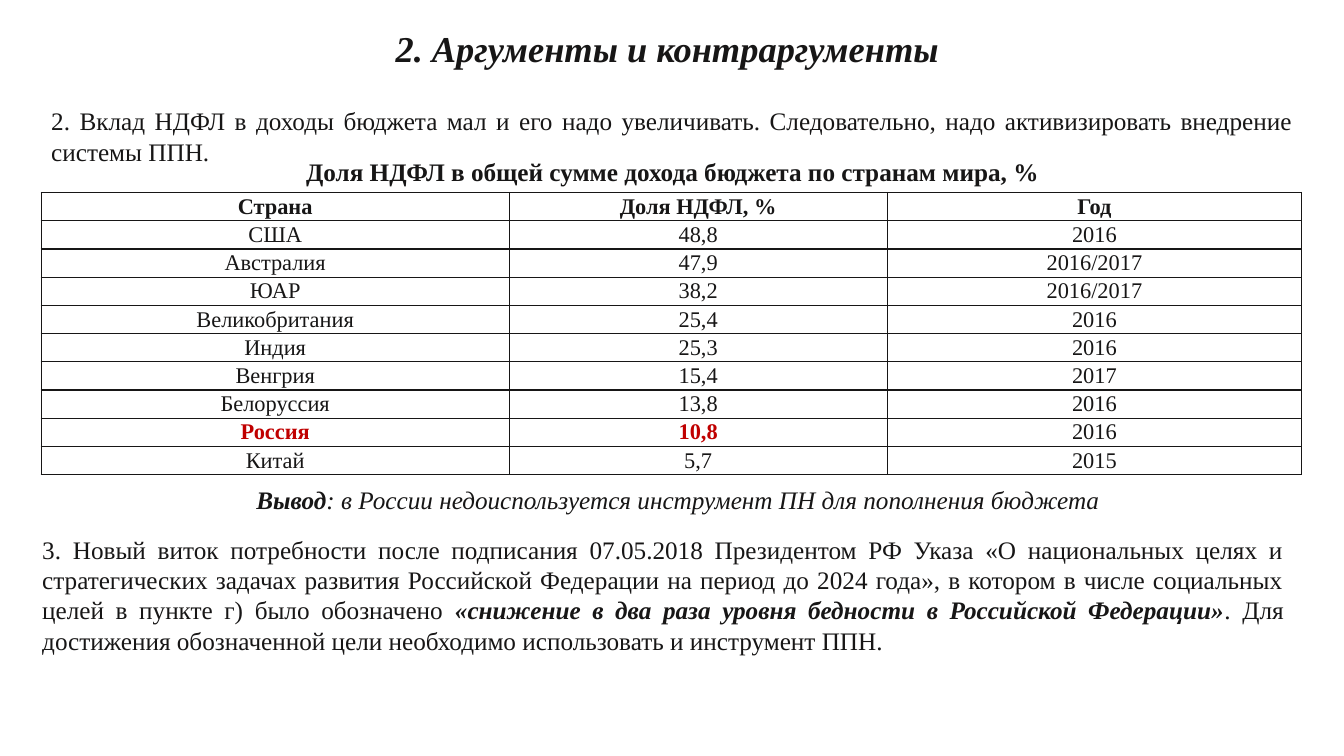
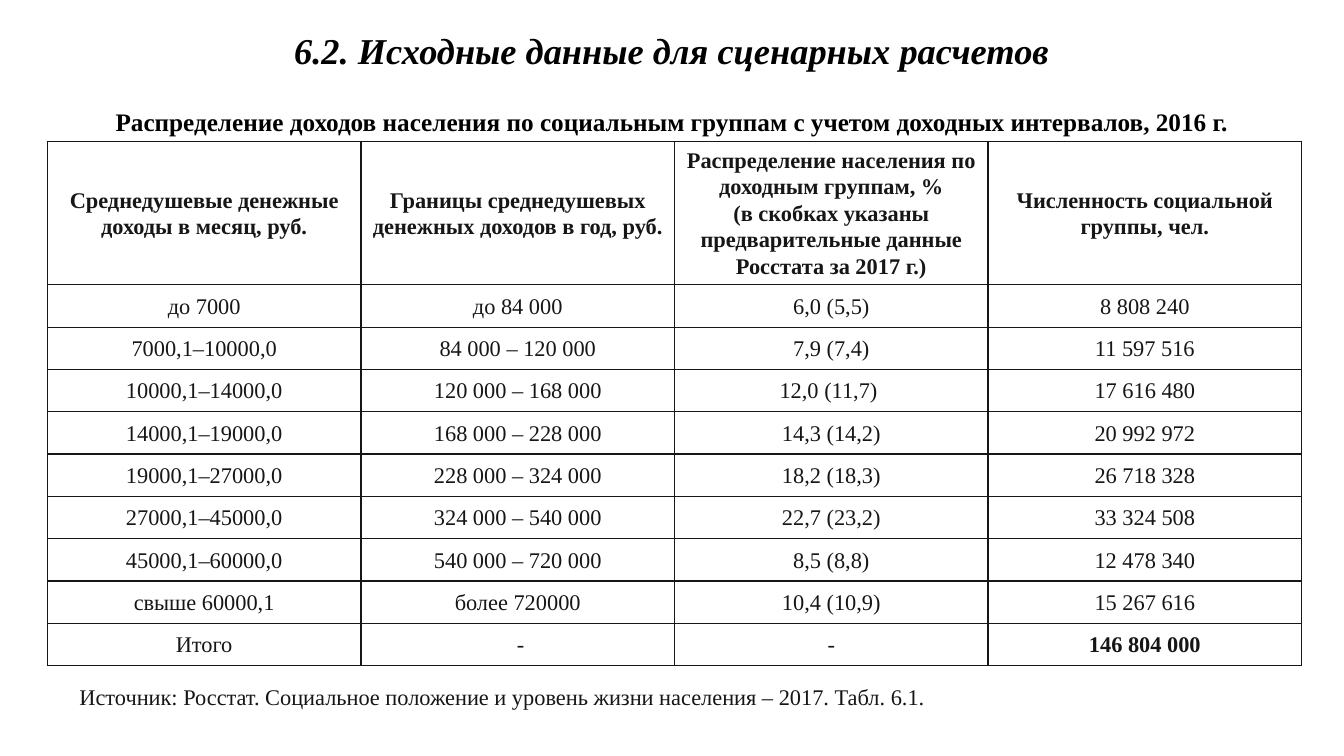
from lxml.etree import SubElement
from pptx import Presentation
from pptx.dml.color import RGBColor
from pptx.enum.text import MSO_ANCHOR, PP_ALIGN
from pptx.oxml.ns import qn
from pptx.util import Inches, Pt

W, H = 13.33, 7.5
FONT = "Times New Roman"
INK = RGBColor(0x17, 0x16, 0x16)
BLACK = RGBColor(0, 0, 0)
WHITE = RGBColor(255, 255, 255)
RED = RGBColor(0xC0, 0, 0)
TITLE, BODY, SMALL = 26, 18, 16
CENTER, JUSTIFY, LEFT = PP_ALIGN.CENTER, PP_ALIGN.JUSTIFY, PP_ALIGN.LEFT

# A text is a list of paragraphs, a paragraph a list of (words, style) runs;
# style letters: b = bold, i = italic.
CONTRIBUTION = [[("2. Вклад НДФЛ в доходы бюджета мал и его надо увеличивать. "
                  "Следовательно, надо активизировать внедрение системы ППН.", "")]]
SHARE_CAPTION = [[("Доля НДФЛ в общей сумме дохода бюджета по странам мира, %", "b")]]
CONCLUSION = [[("Вывод", "bi"),
               (": в России недоиспользуется инструмент ПН для пополнения бюджета", "i")]]
DECREE = [[("3. Новый виток потребности после подписания 07.05.2018 Президентом РФ Указа "
            "«О национальных целях и стратегических задачах развития Российской Федерации "
            "на период до 2024 года», в котором в числе социальных целей в пункте г) "
            "было обозначено ", ""),
           ("«снижение в два раза уровня бедности в Российской Федерации»", "bi"),
           (". Для достижения обозначенной цели необходимо использовать "
            "и инструмент ППН.", "")]]
INCOME_CAPTION = [[("Распределение доходов населения по социальным группам "
                    "с учетом доходных интервалов, 2016 г.", "b")]]
SOURCE = [[("Источник: Росстат. Социальное положение и уровень жизни населения – 2017. "
            "Табл. 6.1.", "")]]

SHARES = [
    ("Страна", "Доля НДФЛ, %", "Год"),
    ("США", "48,8", "2016"),
    ("Австралия", "47,9", "2016/2017"),
    ("ЮАР", "38,2", "2016/2017"),
    ("Великобритания", "25,4", "2016"),
    ("Индия", "25,3", "2016"),
    ("Венгрия", "15,4", "2017"),
    ("Белоруссия", "13,8", "2016"),
    ("Россия", "10,8", "2016"),
    ("Китай", "5,7", "2015"),
]
INCOMES = [
    ("Среднедушевые денежные доходы в месяц, руб.",
     "Границы среднедушевых денежных доходов в год, руб.",
     "Распределение населения по доходным группам, %\n"
     "(в скобках указаны предварительные данные Росстата за 2017 г.)",
     "Численность социальной группы, чел."),
    ("до 7000", "до 84 000", "6,0 (5,5)", "8 808 240"),
    ("7000,1–10000,0", "84 000 – 120 000", "7,9 (7,4)", "11 597 516"),
    ("10000,1–14000,0", "120 000 – 168 000", "12,0 (11,7) ", "17 616 480"),
    ("14000,1–19000,0", "168 000 – 228 000", "14,3 (14,2)", "20 992 972"),
    ("19000,1–27000,0", "228 000 – 324 000", "18,2 (18,3)", "26 718 328"),
    ("27000,1–45000,0", "324 000 – 540 000", "22,7 (23,2)", "33 324 508"),
    ("45000,1–60000,0", "540 000 – 720 000", "8,5 (8,8)", "12 478 340"),
    ("свыше 60000,1", "более 720000", "10,4 (10,9)", "15 267 616"),
    ("Итого", " -", "-", "146 804 000"),
]
# Cells set in bold, with their colour
SHARE_ACCENTS = {"Россия": RED, "10,8": RED}
INCOME_ACCENTS = {"146 804 000": INK}


def write(tf, paragraphs, size, color=INK, align=CENTER, spacing=1.0):
    for i, runs in enumerate(paragraphs):
        p = tf.paragraphs[0] if i == 0 else tf.add_paragraph()
        p.alignment, p.line_spacing = align, spacing
        for words, style in runs:
            r = p.add_run()
            r.text = words
            f = r.font
            f.name, f.size, f.color.rgb = FONT, Pt(size), color
            f.bold, f.italic = "b" in style, "i" in style


def place(shape, box):
    shape.left, shape.top, shape.width, shape.height = map(Inches, box)


def add_titled_slide(prs, title, box, color, spacing=1.0):
    s = prs.slides.add_slide(prs.slide_layouts[5])
    s.background.fill.solid()
    s.background.fill.fore_color.rgb = WHITE
    place(s.shapes.title, box)
    tf = s.shapes.title.text_frame
    tf.word_wrap, tf.vertical_anchor = True, MSO_ANCHOR.MIDDLE
    write(tf, [[(title, "bi")]], TITLE, color, spacing=spacing)
    return s


def add_text(s, box, paragraphs, size=BODY, **style):
    tf = s.shapes.add_textbox(*map(Inches, box)).text_frame
    tf.word_wrap = True
    write(tf, paragraphs, size, **style)


def add_borders(cell):
    tcPr = cell._tc.get_or_add_tcPr()
    for side in ("a:lnL", "a:lnR", "a:lnT", "a:lnB"):
        ln = SubElement(tcPr, qn(side), w=str(Pt(1)))
        fill = SubElement(ln, qn("a:solidFill"))
        SubElement(fill, qn("a:srgbClr"), val=str(INK))


def add_grid(s, left, top, rows, widths, head_height, row_height, accents, spacing=1.0):
    heights = [head_height] + [row_height] * (len(rows) - 1)
    box = (left, top, sum(widths), sum(heights))
    table = s.shapes.add_table(len(rows), len(widths), *map(Inches, box)).table
    table.first_row = table.horz_banding = False
    for column, width in zip(table.columns, widths):
        column.width = Inches(width)
    for i, (row, height) in enumerate(zip(rows, heights)):
        table.rows[i].height = Inches(height)
        for j, words in enumerate(row):
            cell = table.cell(i, j)
            cell.vertical_anchor = MSO_ANCHOR.MIDDLE
            cell.margin_left = cell.margin_right = Inches(0.07)
            cell.margin_top = cell.margin_bottom = 0
            add_borders(cell)
            cell.fill.solid()
            cell.fill.fore_color.rgb = WHITE
            style = "b" if i == 0 or words in accents else ""
            write(cell.text_frame, [[(line, style)] for line in words.split("\n")],
                  SMALL, accents.get(words, INK), spacing=spacing)


def add_arguments(prs):
    s = add_titled_slide(prs, "2. Аргументы и контраргументы",
                         (0, 0.3, 13.24, 0.41), INK, spacing=0.9)
    text_width = 12.51
    add_text(s, (0.41, 1, text_width, 0.71), CONTRIBUTION, align=JUSTIFY)
    add_grid(s, 0.41, 1.91, SHARES, (4.64, 3.75, 4.11), 0.28, 0.28, SHARE_ACCENTS)
    add_text(s, (2.81, 1.5, 7.72, 0.4), SHARE_CAPTION)
    add_text(s, (0.32, 5.25, text_width, 1.31), DECREE, align=JUSTIFY)
    add_text(s, (0.47, 4.76, text_width, 0.4), CONCLUSION)


def add_source_data(prs):
    s = add_titled_slide(prs, "6.2. Исходные данные для сценарных расчетов",
                         (0, 0.23, W, 0.54), BLACK)
    add_text(s, (0, 0.86, W, 0.5), INCOME_CAPTION, color=BLACK, spacing=1.5)
    add_text(s, (0.69, 6.6, 11.94, 0.46), SOURCE, SMALL, align=LEFT, spacing=1.5)
    add_grid(s, 0.47, 1.4, INCOMES, [3.11] * 4, 1.42, 0.42, INCOME_ACCENTS, spacing=1.07)


def main():
    prs = Presentation()
    prs.slide_width, prs.slide_height = Inches(W), Inches(H)
    add_arguments(prs)
    add_source_data(prs)
    prs.save("out.pptx")


if __name__ == "__main__":
    main()
